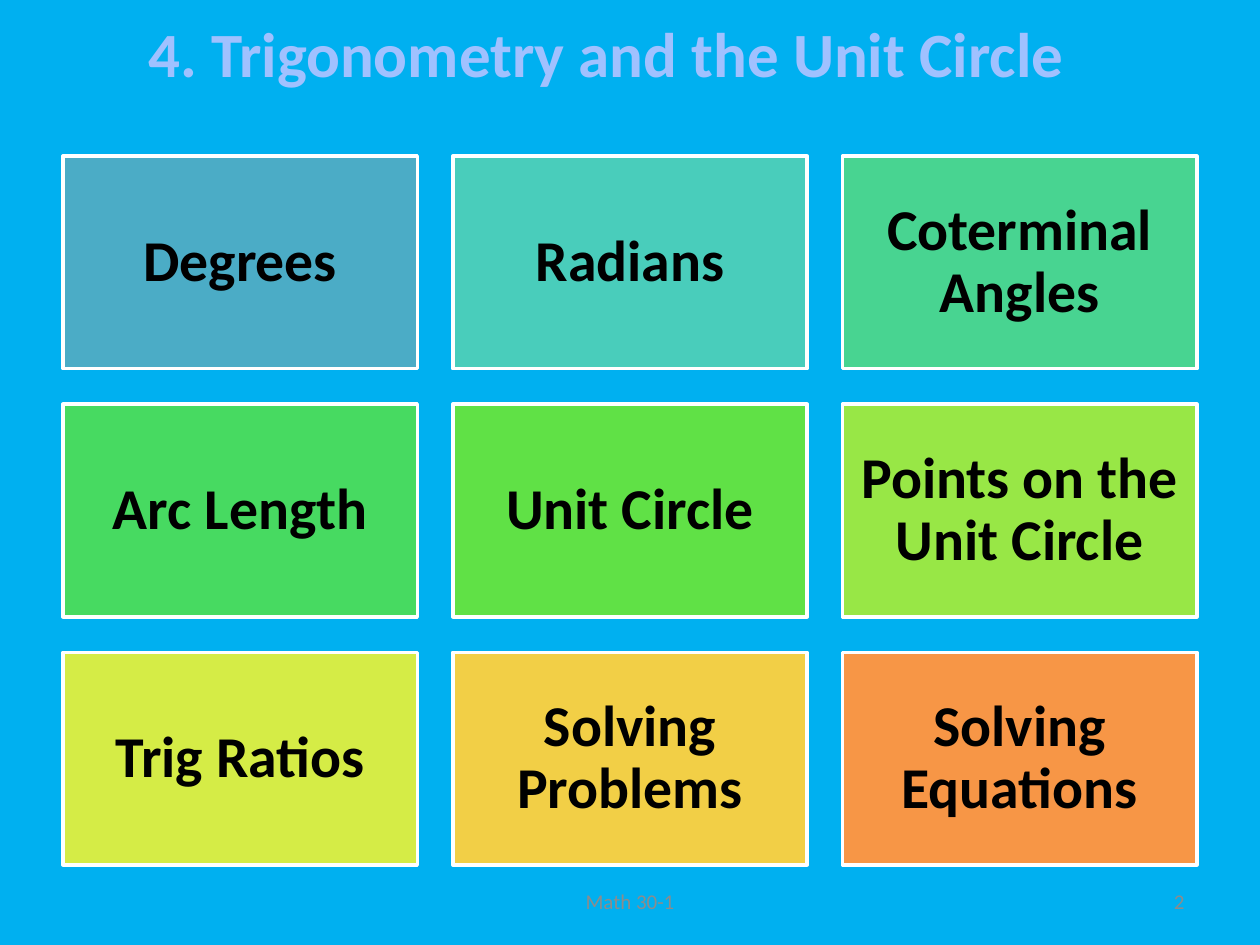
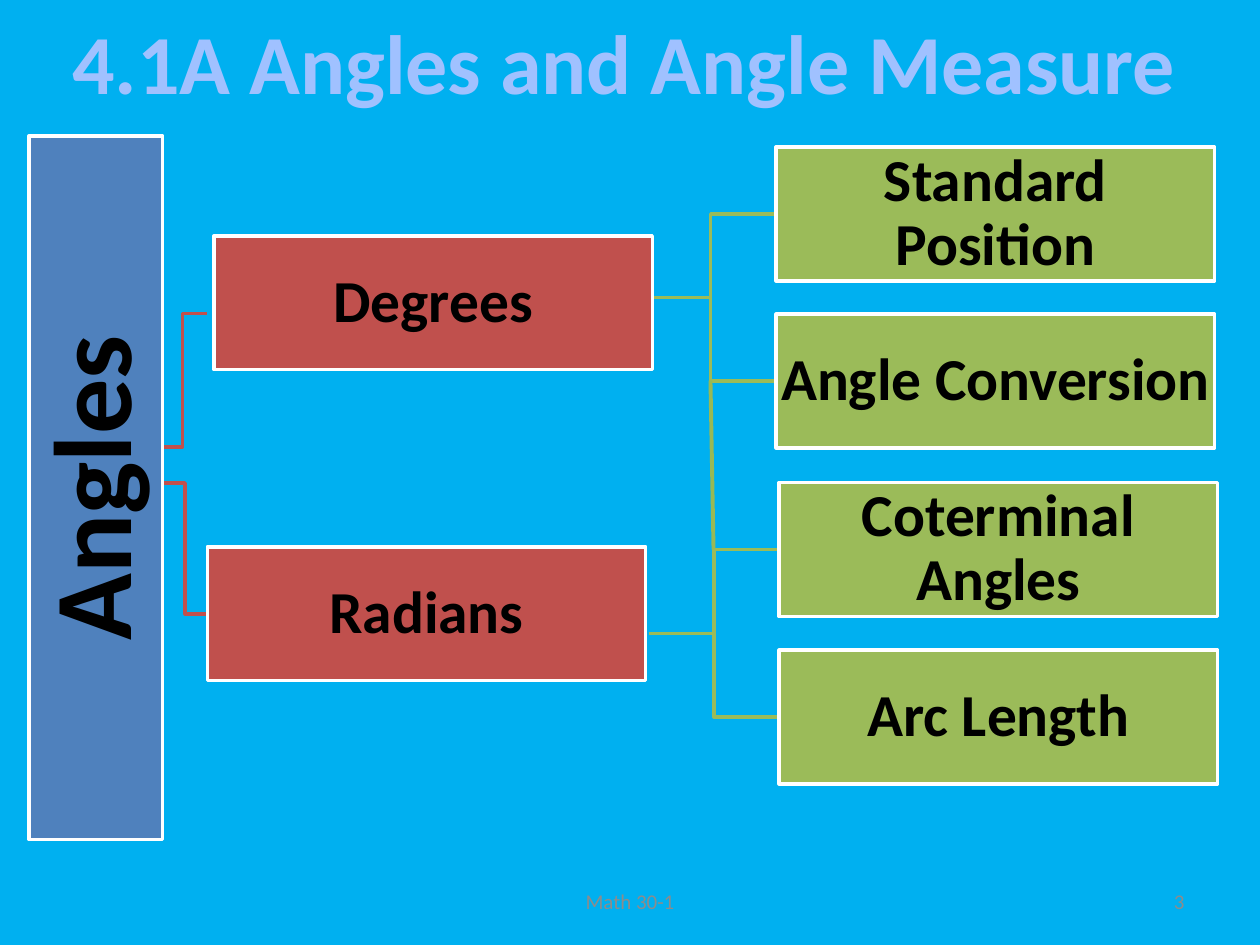
from dataclasses import dataclass
from itertools import product

from lxml.etree import SubElement
from pptx import Presentation
from pptx.dml.color import RGBColor
from pptx.enum.shapes import MSO_CONNECTOR, MSO_SHAPE
from pptx.enum.text import MSO_ANCHOR, MSO_AUTO_SIZE, PP_ALIGN
from pptx.oxml.ns import qn
from pptx.util import Pt


@dataclass(frozen=True)
class Theme:
    font: str = "Calibri"
    background: str = "00B0F0"
    title: str = "A0C1FF"
    ink: str = "000000"
    border: str = "FFFFFF"
    footer: str = "8C8C8C"
    root: str = "4F81BD"
    branch: str = "C0504D"
    leaf: str = "9BBB59"
    spine: str = "98B955"
    topics: tuple = ("4BACC6", "49CDBB", "48D491", "47DA61", "60E146",
                     "98E746", "D5EC46", "F2CF46", "F79646")
    unit_title_size: float = 36
    lesson_title_size: float = 48
    topic_size: float = 33
    branch_size: float = 34
    root_size: float = 63
    footer_size: float = 12
    line_width: float = 2
    spine_width: float = 2.25


FOOTER = "Math 30-1"
TITLE_ONLY = 5


def set_formats(target, formats):
    for attribute, value in formats.items():
        setattr(target, attribute, value)


class Deck:
    """Holds the theme and the slide that is being built."""

    def __init__(self, theme):
        self.theme = theme
        self.presentation = Presentation()
        set_formats(self.presentation,
                    {"slide_width": Pt(720), "slide_height": Pt(540)})
        self.presentation.element.set("firstSlideNum", "2")
        fill = self.presentation.slide_master.background.fill
        fill.solid()
        fill.fore_color.rgb = RGBColor.from_string(theme.background)
        self.slide = None

    def start_slide(self, title, size, bounds):
        layout = self.presentation.slide_layouts[TITLE_ONLY]
        self.slide = self.presentation.slides.add_slide(layout)
        heading = self.slide.shapes.title
        self.place(heading, bounds)
        self.set_text(heading.text_frame, title, size, self.theme.title, bold=True,
                      anchor=MSO_ANCHOR.TOP, wrap=False)
        self.footer()

    def place(self, shape, bounds):
        set_formats(shape, dict(zip(("left", "top", "width", "height"),
                                    map(Pt, bounds))))

    def set_text(self, frame, text, size, color, bold=False, align=PP_ALIGN.CENTER,
                 anchor=MSO_ANCHOR.MIDDLE, wrap=True, inset=None, spacing=1.0):
        set_formats(frame, {"text": text, "auto_size": MSO_AUTO_SIZE.NONE,
                            "word_wrap": wrap, "vertical_anchor": anchor})
        if inset is not None:
            set_formats(frame, {f"margin_{side}": Pt(inset)
                                for side in ("left", "top", "right", "bottom")})
        paragraph = frame.paragraphs[0]
        set_formats(paragraph, {"alignment": align, "line_spacing": spacing})
        for run in paragraph.runs:
            set_formats(run.font, {"name": self.theme.font, "size": Pt(size),
                                   "bold": bold})
            run.font.color.rgb = RGBColor.from_string(color)

    def footer_text(self, text, left, width, align):
        label = self.slide.shapes.add_textbox(Pt(left), Pt(500.5), Pt(width), Pt(28.75))
        self.set_text(label.text_frame, text, self.theme.footer_size,
                      self.theme.footer, align=align)
        return label.text_frame.paragraphs[0]

    def footer(self):
        self.footer_text(FOOTER, 246, 228, PP_ALIGN.CENTER)
        number = len(self.presentation.slides) + 1
        paragraph = self.footer_text(str(number), 516, 168, PP_ALIGN.RIGHT)
        run = paragraph.runs[0]._r
        field = SubElement(paragraph._p, qn("a:fld"), type="slidenum",
                           id="{B6F15528-21DE-4FAA-801E-634DDDAF4B2B}")
        field.extend(list(run))
        paragraph._p.remove(run)

    def box(self, text, bounds, fill, size, inset, rotation=0):
        shape = self.slide.shapes.add_shape(MSO_SHAPE.RECTANGLE, *map(Pt, bounds))
        shape.shadow.inherit = False
        shape.rotation = rotation
        shape.fill.solid()
        shape.fill.fore_color.rgb = RGBColor.from_string(fill)
        shape.line.color.rgb = RGBColor.from_string(self.theme.border)
        shape.line.width = Pt(self.theme.line_width)
        self.set_text(shape.text_frame, text, size, self.theme.ink, bold=True,
                      inset=inset, spacing=0.9)

    def link(self, start, end, color, kind=MSO_CONNECTOR.ELBOW, width=None):
        line = self.slide.shapes.add_connector(kind, *map(Pt, (*start, *end)))
        line.line.color.rgb = RGBColor.from_string(color)
        line.line.width = Pt(width or self.theme.line_width)
        SubElement(line._element.spPr, qn("a:effectLst"))


def build_unit_overview(deck):
    theme = deck.theme
    deck.start_slide("4. Trigonometry and the Unit Circle", theme.unit_title_size,
                     (75, 4.5, 543, 51))
    topics = ("Degrees", "Radians", "Coterminal Angles",
              "Arc Length", "Unit Circle", "Points on the Unit Circle",
              "Trig Ratios", "Solving Problems", "Solving Equations")
    width, height, gap = 202.5, 121.5, 20.25
    cells = product(range(3), repeat=2)
    for topic, color, (row, column) in zip(topics, theme.topics, cells):
        bounds = (36 + column * (width + gap), 89.25 + row * (height + gap),
                  width, height)
        deck.box(topic, bounds, color, theme.topic_size, inset=10)


def build_angle_map(deck):
    theme = deck.theme
    deck.start_slide("4.1A Angles and Angle Measure", theme.lesson_title_size,
                     (31, 2.25, 651.5, 65.5))
    width, height = 250.5, 76.5
    # Each branch: label, left, top, link start, link end, exit point, leaves
    branches = (
        ("Degrees", 122.25, 134.75, (90, 255.5), (118.5, 179.25), (368.75, 170),
         (("Standard Position", 443.5, 84), ("Angle Conversion", 443.5, 179.5))),
        ("Radians", 118.5, 312.5, (93, 276), (118.5, 350.75), (370.75, 362),
         (("Coterminal Angles", 445.25, 275.75), ("Arc Length", 445.25, 371.5))),
    )
    for _, _, _, start, end, outlet, leaves in branches:
        deck.link(start, end, theme.branch)
        for _, left, top in leaves:
            deck.link(outlet, (left, top + height / 2), theme.leaf)
    deck.link((406, 217.5), (407.75, 314), theme.spine,
              MSO_CONNECTOR.STRAIGHT, theme.spine_width)

    root_length = 402
    deck.box("Angles", (-146.25, 240.5, root_length, height), theme.root,
             theme.root_size, inset=3, rotation=270)
    for label, left, top, *_, leaves in branches:
        deck.box(label, (left, top, width, height), theme.branch,
                 theme.branch_size, inset=1.5)
        for leaf, leaf_left, leaf_top in leaves:
            deck.box(leaf, (leaf_left, leaf_top, width, height), theme.leaf,
                     theme.branch_size, inset=1.5)


def main():
    deck = Deck(Theme())
    build_unit_overview(deck)
    build_angle_map(deck)
    deck.presentation.save("out.pptx")


if __name__ == "__main__":
    main()
